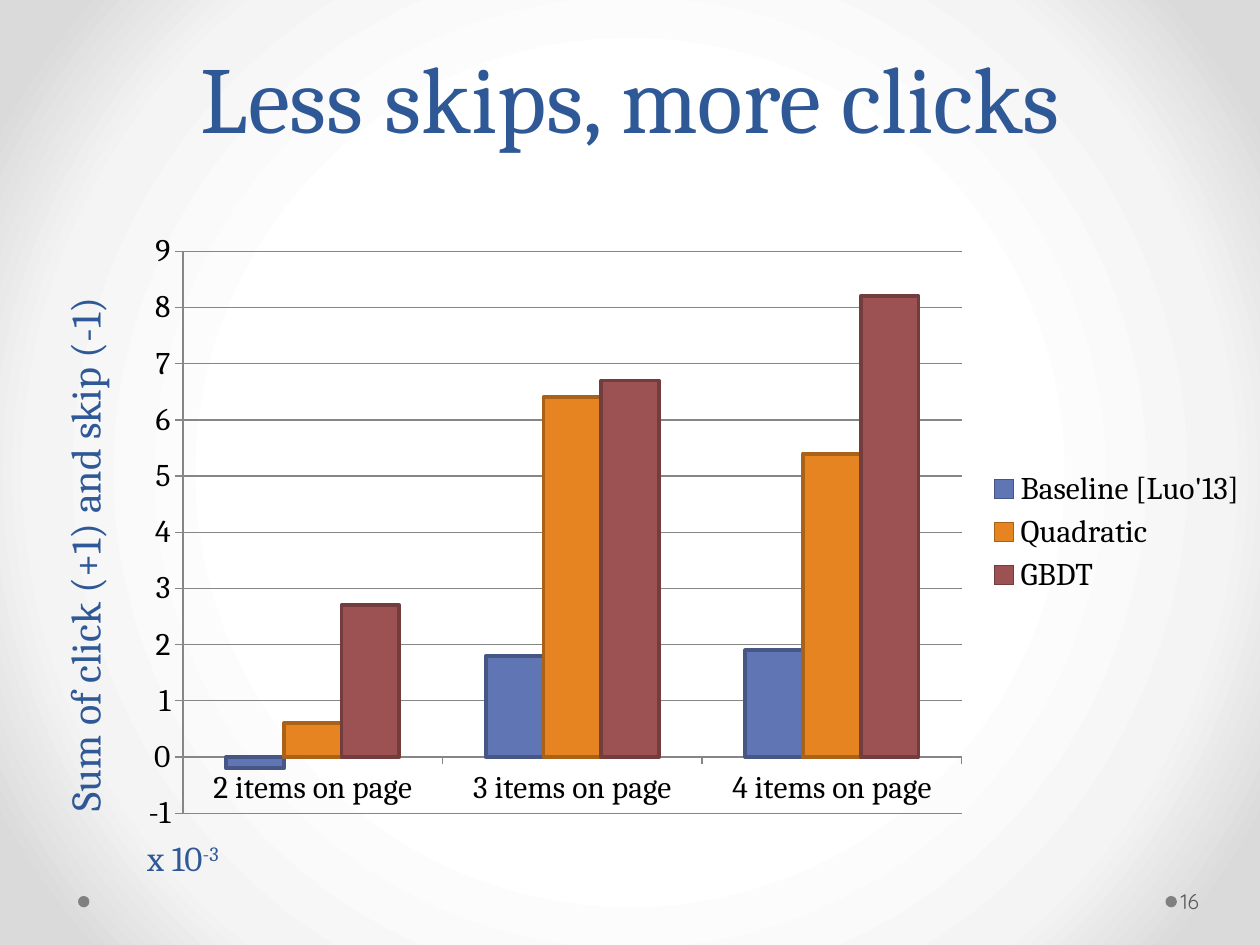
import pptx
import pptx.util
import pptx.dml.color
import pptx.chart.data
import pptx.enum.chart
import pptx.enum.shapes
import pptx.enum.text
import pptx.oxml
import pptx.oxml.ns

Pt = pptx.util.Pt
RGB = pptx.dml.color.RGBColor
Anchor = pptx.enum.text.MSO_ANCHOR
XL = pptx.enum.chart

BLUE = RGB(0x2F, 0x58, 0x97)
BLACK = RGB(0, 0, 0)
GRAY = RGB(0x80, 0x80, 0x80)
AXIS_GRAY = RGB(0x86, 0x86, 0x86)
NUMBER_GRAY = RGB(0x59, 0x59, 0x59)
SERIF, SANS = "Cambria", "Quicksand"

BACKDROP = [(50, "FFFFFF"), (76, "F4F4F4"), (92, "DADADA")]
CATEGORIES = ["2 items on page", "3 items on page", "4 items on page"]
SERIES = [  # name, values, fill, outline
    ("Baseline [Luo'13]", (-0.2, 1.8, 1.9), RGB(0x60, 0x76, 0xB4), RGB(0x47, 0x57, 0x85)),
    ("Quadratic", (0.6, 6.4, 5.4), RGB(0xE6, 0x84, 0x22), RGB(0xAA, 0x62, 0x19)),
    ("GBDT", (2.7, 6.7, 8.2), RGB(0x9C, 0x52, 0x52), RGB(0x73, 0x3D, 0x3D)),
]
DOT_LEFTS = (666, 44.6)


def paint_backdrop(slide):
    """Fill the background with a round gradient around the centre."""
    slide.background.fill.solid()
    solid = slide.background._cSld.bg.bgPr[0]
    stops = "".join(f'<a:gs pos="{pos * 1000}"><a:srgbClr val="{color}"/></a:gs>'
                    for pos, color in BACKDROP)
    gradient = pptx.oxml.parse_xml(
        f'<a:gradFill {pptx.oxml.ns.nsdecls("a")} rotWithShape="1"><a:gsLst>{stops}</a:gsLst>'
        '<a:path path="circle"><a:fillToRect l="50000" t="50000" r="50000" b="50000"/>'
        '</a:path></a:gradFill>')
    solid.getparent().replace(solid, gradient)


def add_text(slide, box, runs, size, color=BLUE, font=SERIF, anchor=Anchor.TOP, wrap=True):
    shape = slide.shapes.add_textbox(*map(Pt, box))
    frame = shape.text_frame
    frame.word_wrap = wrap
    frame.vertical_anchor = anchor
    for words in runs:
        run = frame.paragraphs[0].add_run()
        run.text = words
        run.font.size, run.font.name = Pt(size), font
        run.font.color.rgb = color
    return shape


def add_reward_chart(slide):
    data = pptx.chart.data.CategoryChartData()
    data.categories = CATEGORIES
    for name, values, _, _ in SERIES:
        data.add_series(name, values)
    chart = slide.shapes.add_chart(XL.XL_CHART_TYPE.COLUMN_CLUSTERED,
                                   Pt(72), Pt(126), Pt(648), Pt(356.4), data).chart
    chart.has_title = False
    chart.font.size, chart.font.name = Pt(18), SERIF
    chart.font.color.rgb = BLACK
    chart.has_legend = True
    chart.legend.position = XL.XL_LEGEND_POSITION.RIGHT
    chart.legend.include_in_layout = False

    values_axis = chart.value_axis
    values_axis.minimum_scale, values_axis.maximum_scale, values_axis.major_unit = -1, 9, 1
    values_axis.has_major_gridlines = True
    values_axis.tick_labels.number_format = "General"
    values_axis.tick_labels.number_format_is_linked = False
    for axis in (chart.category_axis, values_axis):
        axis.major_tick_mark = XL.XL_TICK_MARK.OUTSIDE
    for part in (chart.category_axis, values_axis, values_axis.major_gridlines):
        part.format.line.color.rgb = AXIS_GRAY
        part.format.line.width = Pt(0.75)

    plot = chart.plots[0]
    plot.gap_width, plot.overlap, plot.vary_by_categories = 150, 0, False
    for bars, (_, _, fill, outline) in zip(plot.series, SERIES):
        bars.invert_if_negative = False
        bars.format.fill.solid()
        bars.format.fill.fore_color.rgb = fill
        bars.format.line.color.rgb = outline
        bars.format.line.width = Pt(2.25)


def main():
    deck = pptx.Presentation()
    deck.slide_width, deck.slide_height = Pt(720), Pt(540)
    slide = deck.slides.add_slide(deck.slide_layouts[6])
    paint_backdrop(slide)

    for left in DOT_LEFTS:
        dot = slide.shapes.add_shape(pptx.enum.shapes.MSO_SHAPE.OVAL,
                                     Pt(left), Pt(512), Pt(6.5), Pt(6.5))
        dot.shadow.inherit = False
        dot.fill.solid()
        dot.fill.fore_color.rgb = GRAY
        dot.line.fill.background()

    title = add_text(slide, (36, 13, 648, 77.8), ["Less skips, more clicks"], 54,
                     anchor=Anchor.BOTTOM)
    heading = title.text_frame.paragraphs[0]
    heading.alignment = pptx.enum.text.PP_ALIGN.CENTER
    heading.line_spacing = Pt(58)

    add_reward_chart(slide)

    number = add_text(slide, (672.5, 500.4, 44, 28.8), ["16"], 12, NUMBER_GRAY, SANS,
                      Anchor.MIDDLE)
    number.text_frame.margin_left = Pt(2.2)
    number.text_frame.margin_right = Pt(3.6)

    axis_title = add_text(slide, (-126.7, 278, 349.2, 36), ["Sum of click (+1) and skip (-1)"], 24)
    axis_title.rotation = 270

    scale = add_text(slide, (77, 474.5, 61.2, 31.7), ["x 10", "-3"], 20, wrap=False)
    exponent = scale.text_frame.paragraphs[0].runs[1]
    exponent.font._element.set("baseline", "30000")

    deck.save("out.pptx")


if __name__ == "__main__":
    main()
